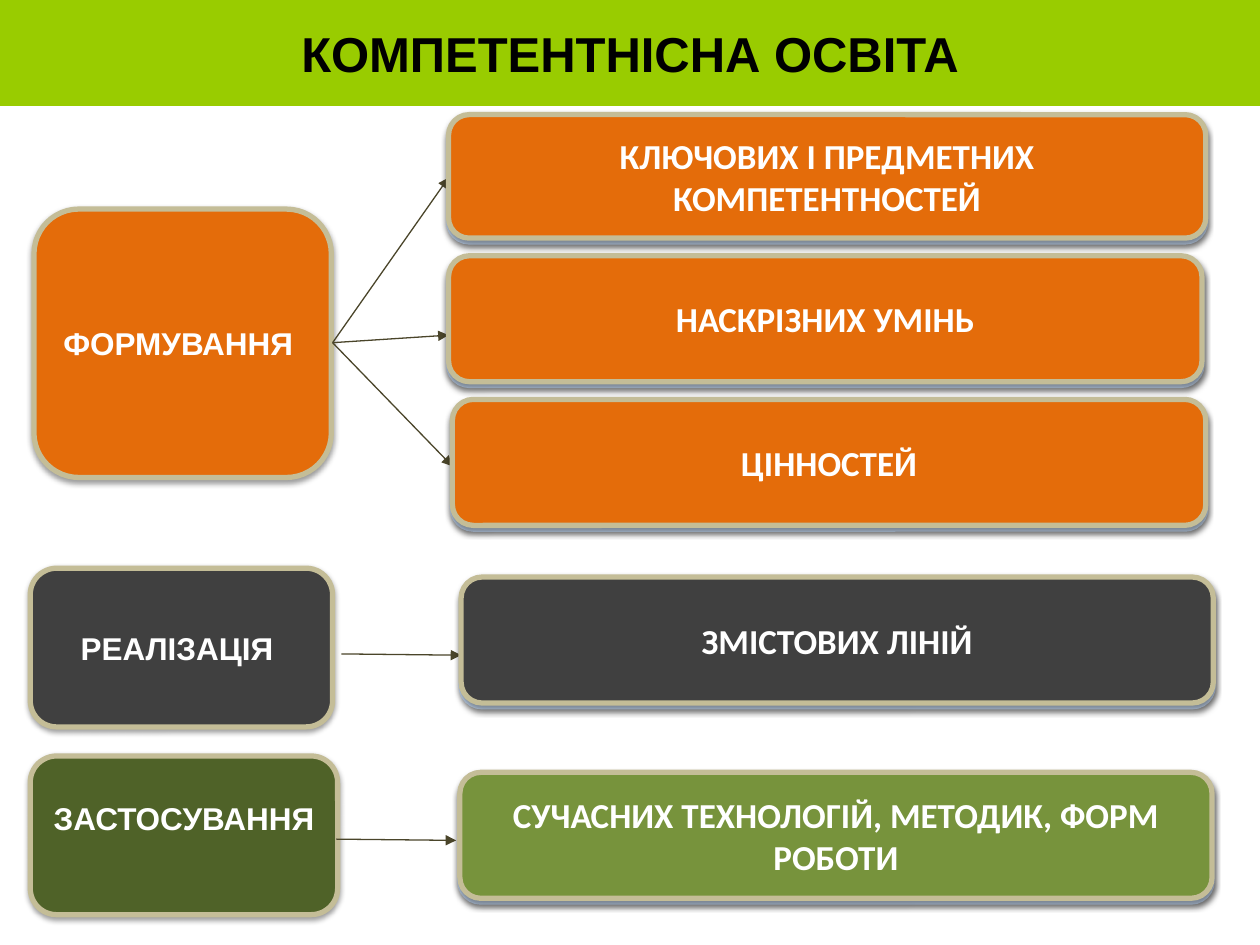
from dataclasses import dataclass

from lxml import etree
from pptx import Presentation
from pptx.dml.color import RGBColor
from pptx.enum.shapes import MSO_CONNECTOR, MSO_SHAPE
from pptx.enum.text import MSO_ANCHOR, MSO_AUTO_SIZE, PP_ALIGN
from pptx.oxml import parse_xml
from pptx.oxml.ns import nsdecls, qn
from pptx.util import Inches, Pt

ROUNDED = MSO_SHAPE.ROUNDED_RECTANGLE
STRAIGHT = MSO_CONNECTOR.STRAIGHT
CENTER = PP_ALIGN.CENTER
MIDDLE = MSO_ANCHOR.MIDDLE
TITLE_ONLY = 5
COLS, ROWS = 100, 75


@dataclass(frozen=True)
class Theme:
    banner: str = "99CC00"
    title: str = "000000"
    text: str = "FFFFFF"
    orange: str = "E46C0A"
    gray: str = "404040"
    dark_green: str = "4F6228"
    green: str = "77933C"
    border: str = "C4BD97"
    backing: str = "C6D9F1"
    arrow: str = "4A452A"
    title_font: str = "Arial"
    card_font: str = "Calibri"
    title_size: int = 28
    group_size: int = 18
    card_size: int = 20
    border_width: float = 3
    arrow_width: float = 0.75


T = Theme()
BACKING_DROP = 0.3  # rows by which a backing sits below its card

# text, (column, row, columns, rows), fill, room kept below the text in points
GROUPS = [
    ("ФОРМУВАННЯ ", (2.7, 16.6, 23.6, 21.3), T.orange, 3.6),
    ("РЕАЛІЗАЦІЯ ", (2.4, 45.1, 24, 12.6), T.gray, 3.6),
    ("ЗАСТОСУВАННЯ", (2.4, 60, 24.4, 12.6), T.dark_green, 24),
]
# text, (column, row, columns, rows), fill, arrow start, arrow end
CARDS = [
    ("КЛЮЧОВИХ І ПРЕДМЕТНИХ КОМПЕТЕНТНОСТЕЙ", (35.6, 9.1, 60.1, 9.8),
     T.orange, (26.4, 27.2), (35.6, 14.1)),
    ("НАСКРІЗНИХ УМІНЬ", (35.6, 20.3, 59.8, 10),
     T.orange, (26.4, 27.2), (35.6, 26.6)),
    ("ЦІННОСТЕЙ", (35.9, 31.7, 59.8, 10),
     T.orange, (26.4, 27.2), (35.9, 37)),
    ("ЗМІСТОВИХ ЛІНІЙ", (36.6, 45.8, 59.7, 10),
     T.gray, (27.1, 51.9), (36.6, 52)),
    ("СУЧАСНИХ ТЕХНОЛОГІЙ, МЕТОДИК, ФОРМ РОБОТИ", (36.5, 61.3, 59.7, 10),
     T.green, (26.7, 66.6), (36.2, 66.7)),
]


def rgb(color):
    return RGBColor.from_string(color)


def grid(prs, *cells):
    """Turn alternating column and row counts into slide lengths."""
    units = (prs.slide_width / COLS, prs.slide_height / ROWS)
    return [round(n * units[i % 2]) for i, n in enumerate(cells)]


def set_text(shape, text, font, size, color):
    tf = shape.text_frame
    tf.word_wrap = True
    tf.auto_size = MSO_AUTO_SIZE.NONE
    tf.vertical_anchor = MIDDLE
    tf.text = text
    p = tf.paragraphs[0]
    p.alignment = CENTER
    r = p.runs[0]
    r.font.name = font
    r.font.size = Pt(size)
    r.font.bold = True
    r.font.color.rgb = rgb(color)


def add_shadow(shape):
    shape.shadow.inherit = False
    effects = shape._element.spPr.find(qn("a:effectLst"))
    effects.append(parse_xml(
        f'<a:outerShdw {nsdecls("a")} blurRad="{Pt(3.1)}" dist="{Pt(1.6)}" '
        'dir="5400000" rotWithShape="0"><a:srgbClr val="000000">'
        '<a:alpha val="38000"/></a:srgbClr></a:outerShdw>'))


def add_card(prs, s, cells, fill, border):
    sp = s.shapes.add_shape(ROUNDED, *grid(prs, *cells))
    sp.fill.solid()
    sp.fill.fore_color.rgb = rgb(fill)
    sp.line.color.rgb = rgb(border)
    sp.line.width = Pt(T.border_width)
    add_shadow(sp)
    return sp


def add_backing(prs, s, cells):
    col, row, cols, rows = cells
    add_card(prs, s, (col, row + BACKING_DROP, cols, rows), T.backing, T.backing)


def add_arrow(prs, s, start, end):
    line = s.shapes.add_connector(STRAIGHT, *grid(prs, *start, *end))
    line.line.color.rgb = rgb(T.arrow)
    line.line.width = Pt(T.arrow_width)
    etree.SubElement(line.line._get_or_add_ln(), qn("a:tailEnd"), type="triangle")
    etree.SubElement(line._element.spPr, qn("a:effectLst"))


def add_title(prs, s, text):
    title = s.shapes.title
    title.left, title.top, title.width, title.height = grid(prs, 0, 0, COLS, 8.4)
    title.fill.solid()
    title.fill.fore_color.rgb = rgb(T.banner)
    set_text(title, text, T.title_font, T.title_size, T.title)


def main():
    prs = Presentation()
    prs.slide_width, prs.slide_height = Inches(10), Inches(7.5)
    s = prs.slides.add_slide(prs.slide_layouts[TITLE_ONLY])
    add_title(prs, s, "КОМПЕТЕНТНІСНА ОСВІТА")
    for text, cells, fill, room in GROUPS:
        sp = add_card(prs, s, cells, fill, T.border)
        set_text(sp, text, T.title_font, T.group_size, T.text)
        sp.text_frame.margin_bottom = Pt(room)
    for text, cells, fill, start, end in CARDS:
        add_backing(prs, s, cells)
        add_arrow(prs, s, start, end)
        sp = add_card(prs, s, cells, fill, T.border)
        set_text(sp, text, T.card_font, T.card_size, T.text)
    prs.save("out.pptx")


if __name__ == "__main__":
    main()
